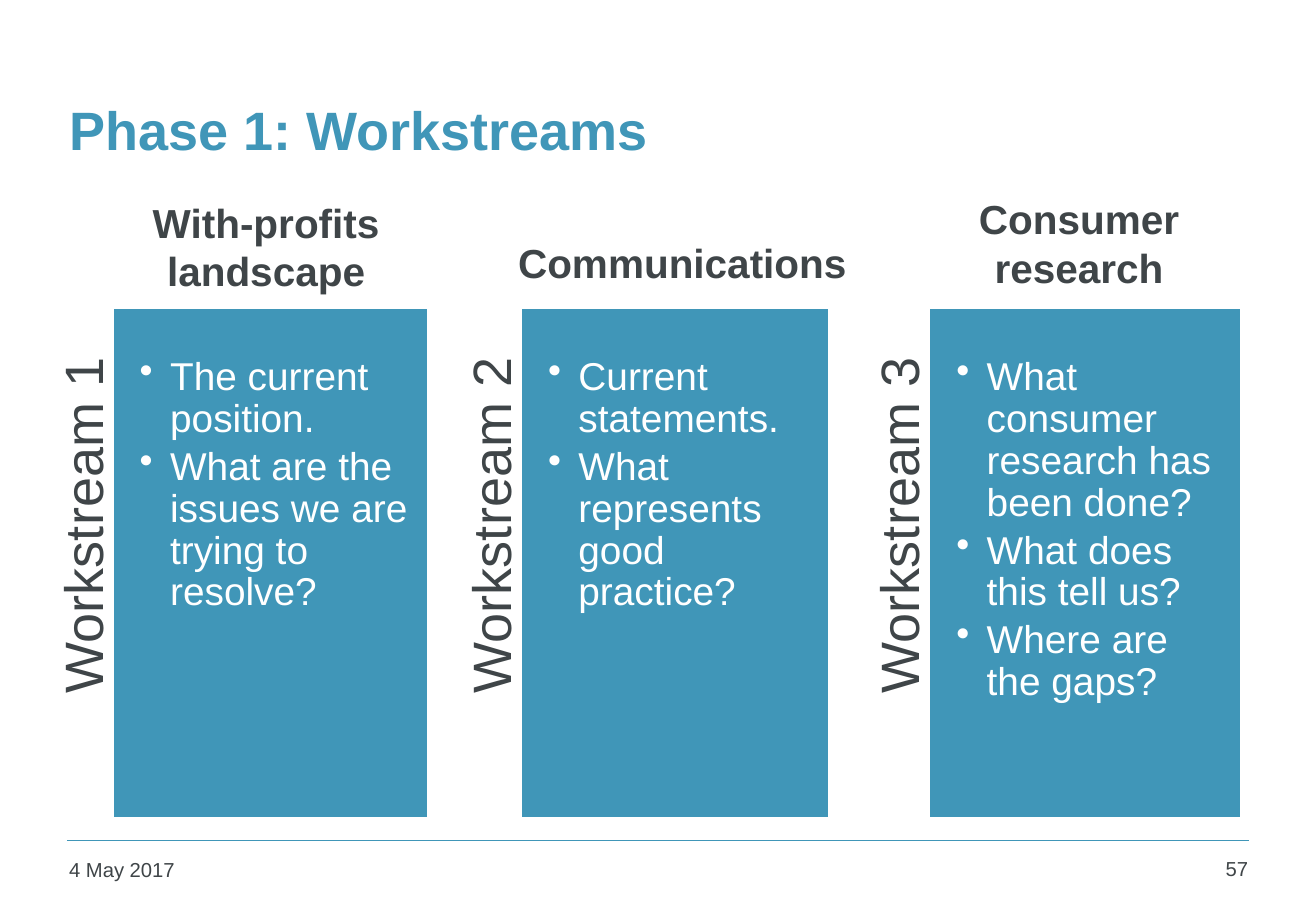
from dataclasses import dataclass

from lxml import etree
from pptx import Presentation
from pptx.dml.color import RGBColor
from pptx.enum.shapes import MSO_CONNECTOR, MSO_SHAPE
from pptx.enum.text import MSO_ANCHOR, PP_ALIGN
from pptx.oxml.ns import qn
from pptx.util import Pt

PX = 9144  # EMU; 100 px to the inch
LEFT, CENTER, RIGHT = PP_ALIGN.LEFT, PP_ALIGN.CENTER, PP_ALIGN.RIGHT
TOP, MIDDLE = MSO_ANCHOR.TOP, MSO_ANCHOR.MIDDLE
RECTANGLE, STRAIGHT = MSO_SHAPE.RECTANGLE, MSO_CONNECTOR.STRAIGHT


@dataclass(frozen=True)
class Theme:
    font: str = "Arial"
    accent: RGBColor = RGBColor(0x40, 0x96, 0xB8)
    ink: RGBColor = RGBColor(0x3F, 0x45, 0x48)
    white: RGBColor = RGBColor(0xFF, 0xFF, 0xFF)
    large: int = 32
    heading: int = 24
    body: int = 23
    small: int = 12


class SlideBuilder:
    def __init__(self, slide, theme):
        self.slide = slide
        self.theme = theme

    def text(self, box, lines, size, color, bold=False, align=LEFT, anchor=TOP,
             insets=(10, 5, 10, 5), spacing=None, after=None, rotation=0, bullets=False):
        """Add a text box; box is left, top, width, height and insets run left, top, right, bottom."""
        shape = self.slide.shapes.add_textbox(*(value * PX for value in box))
        shape.rotation = rotation
        frame = shape.text_frame
        frame.word_wrap = True
        frame.vertical_anchor = anchor
        for side, inset in zip(("left", "top", "right", "bottom"), insets):
            setattr(frame, f"margin_{side}", inset * PX)
        font_format = {"name": self.theme.font, "size": Pt(size), "bold": bold}
        paragraph_format = {"alignment": align, "line_spacing": spacing, "space_after": after}
        for index, line in enumerate(lines):
            paragraph = frame.add_paragraph() if index else frame.paragraphs[0]
            for name, value in paragraph_format.items():
                setattr(paragraph, name, value)
            if bullets:
                self.bullet(paragraph)
            run = paragraph.add_run()
            run.text = line
            for name, value in font_format.items():
                setattr(run.font, name, value)
            run.font.color.rgb = color

    def bullet(self, paragraph, indent=25):
        properties = paragraph._p.get_or_add_pPr()
        properties.set("marL", str(indent * PX))
        properties.set("indent", str(-indent * PX))
        etree.SubElement(properties, qn("a:buChar"), char="•")

    def panel(self, box):
        shape = self.slide.shapes.add_shape(RECTANGLE, *(value * PX for value in box))
        shape.shadow.inherit = False
        shape.fill.solid()
        shape.fill.fore_color.rgb = self.theme.accent
        shape.line.color.rgb = self.theme.white
        shape.line.width = Pt(2)

    def rule(self, left, right, y):
        line = self.slide.shapes.add_connector(STRAIGHT, left * PX, y * PX, right * PX, y * PX)
        line.line.color.rgb = self.theme.accent
        line.line.width = Pt(1)
        etree.SubElement(line._element.spPr, qn("a:effectLst"))

    def workstream(self, number, left, panel_width, text_width, heading, heading_box, points):
        """Add one column: sideways label, panel with bullets, and heading above."""
        theme = self.theme
        top, height, label_height = 253, 421, 46
        label_center = left - 23
        label_box = (label_center - height // 2, top + (height - label_height) // 2 + 1,
                     height, label_height)
        self.text(label_box, [f"Workstream {number}"], theme.large, theme.ink, align=RIGHT,
                  insets=(0, 0, 41, 0), spacing=0.9, rotation=270)
        self.panel((left, top, panel_width, height))
        self.text((left, top, text_width, height), points, theme.body, theme.white,
                  insets=(23, 41, 23, 23), spacing=0.9, after=Pt(3.45), bullets=True)
        self.text(heading_box, [heading], theme.heading, theme.ink, bold=True, align=CENTER,
                  insets=(5, 5, 5, 5))


WORKSTREAMS = [
    (261, 269, "With-profits landscape", (85, 158, 268, 91),
     ["The current position.", "What are the issues we are trying to resolve?"]),
    (255, 255, "Communications", (416, 191, 291, 50),
     ["Current statements.", "What represents good practice?"]),
    (258, 258, "Consumer research", (762, 155, 252, 91),
     ["What consumer research has been done?", "What does this tell us?",
      "Where are the gaps?"]),
]


def main():
    presentation = Presentation()
    presentation.slide_width, presentation.slide_height = 1083 * PX, 750 * PX
    theme = Theme()
    builder = SlideBuilder(presentation.slides.add_slide(presentation.slide_layouts[6]), theme)

    builder.rule(55, 1028, 692)
    builder.text((47, 44, 982, 125), ["Phase 1: Workstreams"], theme.large, theme.accent,
                 bold=True, anchor=MIDDLE)
    builder.text((47, 701, 239, 36), ["4 May 2017"], theme.small, theme.ink)
    builder.text((960, 700, 77, 37), ["57"], theme.small, theme.ink, align=RIGHT)
    for index, workstream in enumerate(WORKSTREAMS):
        builder.workstream(index + 1, 92 + 336 * index, *workstream)

    presentation.save("out.pptx")


if __name__ == "__main__":
    main()
